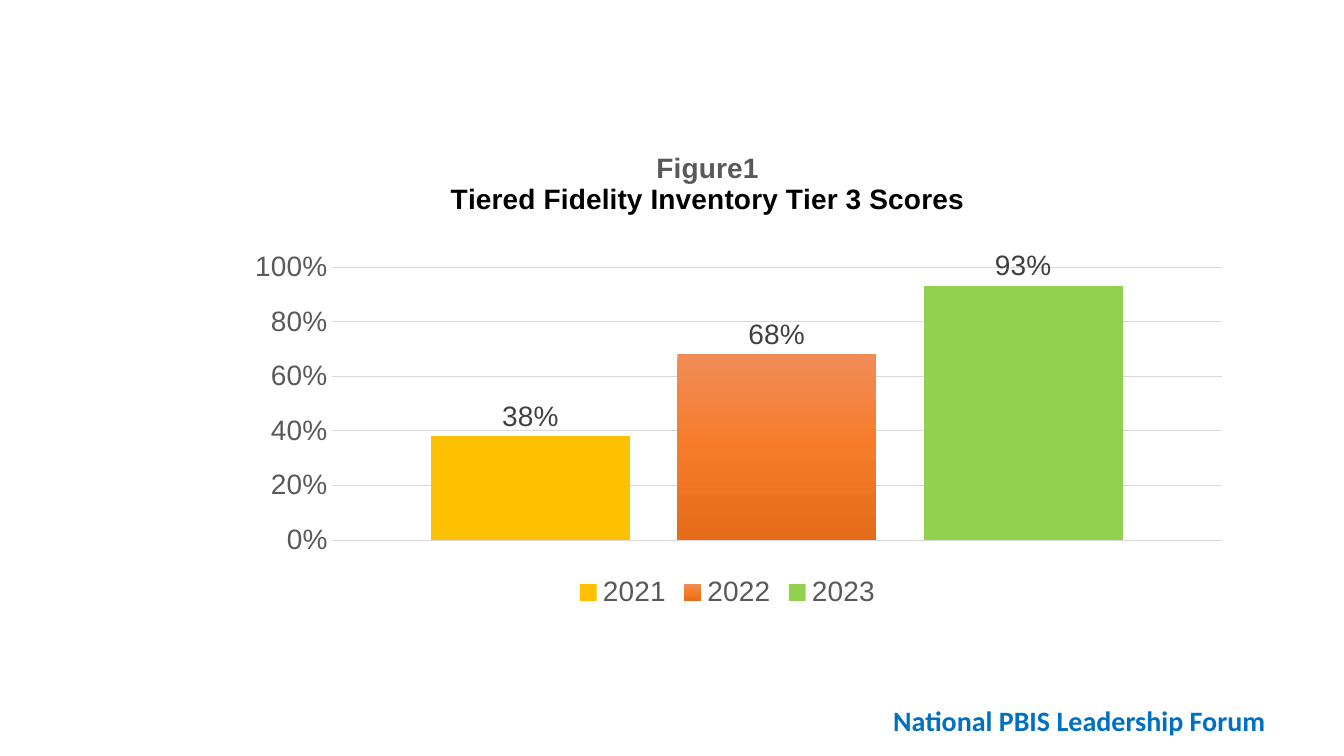
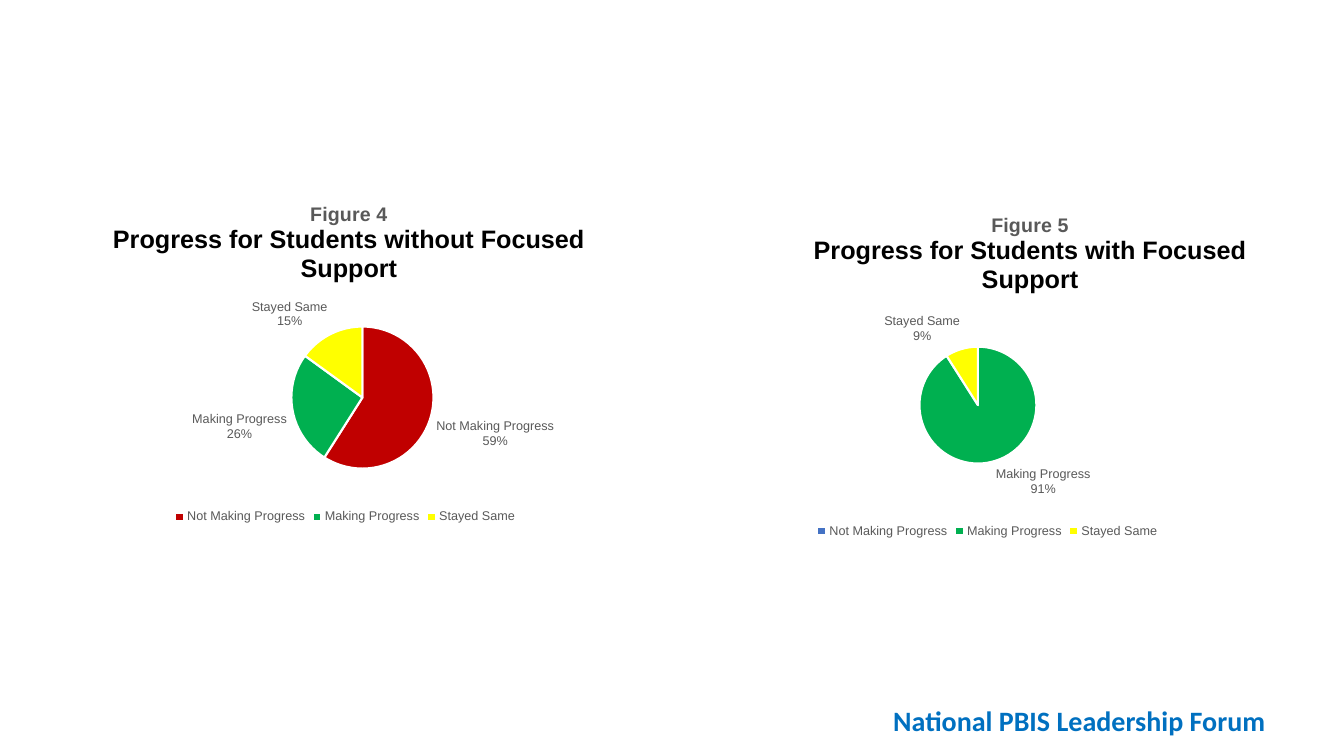
from copy import deepcopy
from dataclasses import dataclass

from lxml import etree
from pptx import Presentation
from pptx.chart.data import CategoryChartData
from pptx.dml.color import RGBColor
from pptx.enum.chart import XL_CHART_TYPE, XL_LABEL_POSITION, XL_LEGEND_POSITION, XL_TICK_MARK
from pptx.enum.text import PP_ALIGN
from pptx.oxml.ns import qn
from pptx.util import Inches, Pt

COLUMN, PIE = XL_CHART_TYPE.COLUMN_CLUSTERED, XL_CHART_TYPE.PIE
OUTSIDE_END = XL_LABEL_POSITION.OUTSIDE_END
LEGEND_BOTTOM = XL_LEGEND_POSITION.BOTTOM
NO_TICKS = XL_TICK_MARK.NONE
CENTER = PP_ALIGN.CENTER
BLANK_LAYOUT = 6


@dataclass(frozen=True)
class Theme:
    chart_font: str = "Arial"
    footer_font: str = "Calibri"
    black: str = "000000"
    white: str = "FFFFFF"
    gray: str = "595959"
    label_gray: str = "404040"
    grid: str = "D9D9D9"
    footer_blue: str = "0070C0"
    blue: str = "4472C4"
    red: str = "C00000"
    green: str = "00B050"
    yellow: str = "FFFF00"
    gold: str = "FFC000"
    lime: str = "92D050"
    orange_fade: tuple = ("F18C57", "F67B28", "E56C19")
    base_size: int = 10
    large_size: int = 20
    pie_size: int = 9
    pie_figure_size: int = 14
    pie_title_size: int = 18


THEME = Theme()
PROGRESS_COLORS = {
    "Not Making Progress": THEME.red,
    "Making Progress": THEME.green,
    "Stayed Same": THEME.yellow,
}


def style_font(font, size, color, name=THEME.chart_font, bold=False):
    font.name, font.size, font.bold = name, Pt(size), bold
    font.color.rgb = RGBColor.from_string(color)


def fill_solid(fill, color):
    fill.solid()
    fill.fore_color.rgb = RGBColor.from_string(color)


def fill_fade(series, colors):
    """Fill a series from top to bottom with evenly spaced colours."""
    fill = series.format.fill
    fill.gradient()
    fill.gradient_angle = 270
    stop_list = series._element.find(".//" + qn("a:gsLst"))
    while len(stop_list) < len(colors):
        stop_list.insert(1, deepcopy(stop_list[0]))
    for index, (stop, color) in enumerate(zip(fill.gradient_stops, colors)):
        stop.position = index / (len(colors) - 1)
        stop.color.rgb = RGBColor.from_string(color)


def place_part(part, frame, place, index, inner=False):
    """Place a chart part; frame and place are slide positions in inches."""
    for old in part.findall(qn("c:layout")):
        part.remove(old)
    layout = etree.Element(qn("c:layout"))
    part.insert(index, layout)
    manual = etree.SubElement(layout, qn("c:manualLayout"))
    left, top, width, height = frame
    values = [("layoutTarget", "inner")] if inner else []
    values += [("xMode", "edge"), ("yMode", "edge"),
               ("x", (place[0] - left) / width), ("y", (place[1] - top) / height)]
    if inner:
        values += [("w", place[2] / width), ("h", place[3] / height)]
    for name, value in values:
        etree.SubElement(manual, qn("c:" + name)).set("val", str(value))


def add_chart(slide, kind, frame, data, title_lines, title_place, plot_place, text_size):
    """Add a chart with title, legend and plot area; title_lines holds (text, size, color)."""
    chart = slide.shapes.add_chart(kind, *map(Inches, frame), data).chart
    style_font(chart.font, THEME.base_size, THEME.black)
    # Title
    chart.has_title = True
    text_frame = chart.chart_title.text_frame
    text_frame.text = "\n".join(text for text, _, _ in title_lines)
    for para, (_, size, color) in zip(text_frame.paragraphs, title_lines):
        for span in para.runs:
            style_font(span.font, size, color, bold=True)
    place_part(chart.chart_title._element, frame, title_place, 1)
    # Legend
    chart.has_legend = True
    chart.legend.position = LEGEND_BOTTOM
    chart.legend.include_in_layout = False
    style_font(chart.legend.font, text_size, THEME.gray)
    # Plot area
    plot_area = chart._chartSpace.find(".//" + qn("c:plotArea"))
    place_part(plot_area, frame, plot_place, 0, inner=True)
    return chart


def style_labels(labels, size, color):
    style_font(labels.font, size, color)
    labels.number_format = "0%"
    labels.number_format_is_linked = False
    labels.position = OUTSIDE_END


def add_score_chart(slide):
    fills = {"2021": THEME.gold, "2022": THEME.orange_fade, "2023": THEME.lime}
    data = CategoryChartData(number_format="0%")
    data.categories = ["1"]
    for year, score in zip(fills, (0.38, 0.68, 0.93)):
        data.add_series(year, [score])
    size = THEME.large_size
    title = [("Figure1", size, THEME.gray),
             ("Tiered Fidelity Inventory Tier 3 Scores", size, THEME.black)]
    chart = add_chart(slide, COLUMN, (2.17, 1.42, 10.09, 4.67), data, title,
                      (4.44, 1.47), (3.29, 2.65, 8.83, 2.71), size)
    # Columns
    plot = chart.plots[0]
    plot.gap_width, plot.overlap, plot.vary_by_categories = 100, -24, False
    for series in plot.series:
        color = fills[series.name]
        if isinstance(color, tuple):
            fill_fade(series, color)
        else:
            fill_solid(series.format.fill, color)
        series.data_labels.show_value = True
        style_labels(series.data_labels, size, THEME.label_gray)
    # Axes
    chart.category_axis.visible = False
    axis = chart.value_axis
    axis.minimum_scale, axis.maximum_scale, axis.major_unit = 0, 1, 0.2
    axis.major_tick_mark = axis.minor_tick_mark = NO_TICKS
    axis.format.line.fill.background()
    grid_line = axis.major_gridlines.format.line
    grid_line.width = Pt(0.75)
    grid_line.color.rgb = RGBColor.from_string(THEME.grid)
    axis.tick_labels.number_format = "0%"
    axis.tick_labels.number_format_is_linked = False
    style_font(axis.tick_labels.font, size, THEME.gray)


def hide_label(labels, index):
    label = etree.Element(qn("c:dLbl"))
    etree.SubElement(label, qn("c:idx")).set("val", str(index))
    etree.SubElement(label, qn("c:delete")).set("val", "1")
    labels._element.insert(0, label)


def add_progress_pie(slide, frame, figure, title, values, title_place, pie_place):
    """Add a pie; pie_place is left, top and diameter. Empty slices get no label."""
    data = CategoryChartData()
    data.categories = list(PROGRESS_COLORS)
    data.add_series("Series 1", values)
    lines = [(figure, THEME.pie_figure_size, THEME.gray),
             (title, THEME.pie_title_size, THEME.black)]
    left, top, diameter = pie_place
    chart = add_chart(slide, PIE, frame, data, lines, title_place,
                      (left, top, diameter, diameter), THEME.pie_size)
    plot = chart.plots[0]
    plot.vary_by_categories = True
    series = plot.series[0]
    labels = series.data_labels
    labels.show_value = False
    labels.show_percentage = labels.show_category_name = True
    style_labels(labels, THEME.pie_size, THEME.gray)
    for index, (value, color) in enumerate(zip(values, PROGRESS_COLORS.values())):
        look = series.points[index].format
        fill_solid(look.fill, color if value else THEME.blue)
        look.line.width = Pt(1.5)
        look.line.color.rgb = RGBColor.from_string(THEME.white)
        if not value:
            hide_label(labels, index)


def add_footer(slide):
    box = slide.shapes.add_textbox(Inches(8.38), Inches(6.93), Inches(4.65), Inches(0.44))
    box.text_frame.word_wrap = True
    para = box.text_frame.paragraphs[0]
    para.text = "National PBIS Leadership Forum"
    para.alignment = CENTER
    style_font(para.runs[0].font, THEME.large_size, THEME.footer_blue,
               THEME.footer_font, bold=True)


def add_page(deck):
    page = deck.slides.add_slide(deck.slide_layouts[BLANK_LAYOUT])
    add_footer(page)
    return page


def main():
    deck = Presentation()
    deck.slide_width, deck.slide_height = Inches(13.33), Inches(7.5)

    # Fidelity scores
    add_score_chart(add_page(deck))

    # Student progress
    page = add_page(deck)
    add_progress_pie(page, (0.19, 1.8, 6.47, 3.44), "Figure 4",
                     "Progress for Students without Focused Support",
                     (59, 26, 15), (1.09, 1.97), (2.89, 3.24, 1.41))
    add_progress_pie(page, (6.56, 1.97, 6.47, 3.41), "Figure 5",
                     "Progress for Students with Focused Support",
                     (0, 91, 9), (8.04, 2.08), (9.12, 3.44, 1.16))

    deck.save("out.pptx")


if __name__ == "__main__":
    main()
